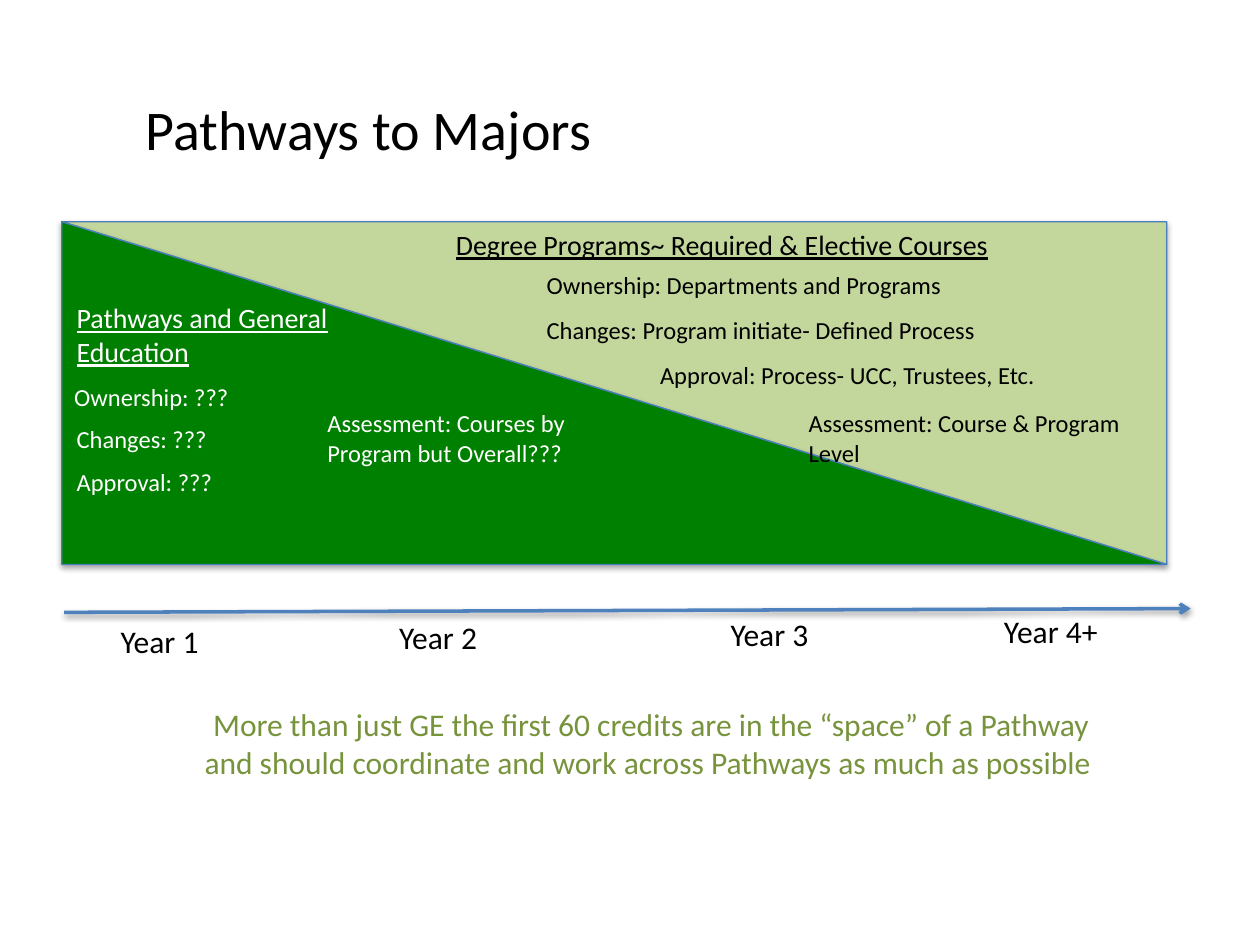
from dataclasses import dataclass

from lxml.etree import SubElement
from pptx import Presentation
from pptx.dml.color import RGBColor as Color
from pptx.enum.shapes import MSO_CONNECTOR as Connector, MSO_SHAPE as Shape
from pptx.enum.text import MSO_ANCHOR as Anchor, MSO_AUTO_SIZE as AutoSize, PP_ALIGN as Align
from pptx.oxml.ns import qn
from pptx.util import Inches, Pt


@dataclass(frozen=True)
class Theme:
    font: str = "Calibri"
    black: str = "000000"
    white: str = "FFFFFF"
    pale: str = "C3D69B"
    green: str = "008000"
    olive: str = "77933C"
    edge: str = "4B7EBC"
    arrow: str = "4F81BD"
    title: int = 32
    large: int = 18
    heading: int = 16
    body: int = 14


class PageBuilder:
    def __init__(self, page, theme):
        self.page = page
        self.theme = theme

    def shadow(self, element, opacity, distance):
        effects = SubElement(element.spPr, qn("a:effectLst"))
        values = {
            "blurRad": Pt(3.1),
            "dist": Pt(distance),
            "dir": 90 * 60000,
            "rotWithShape": 0,
        }
        outer = SubElement(effects, qn("a:outerShdw"))
        for name, value in values.items():
            outer.set(name, str(value))
        color = SubElement(outer, qn("a:srgbClr"), val=self.theme.black)
        SubElement(color, qn("a:alpha"), val=str(opacity * 1000))

    def stroke(self, line, color, width):
        line.color.rgb = Color.from_string(color)
        line.width = Pt(width)

    def triangle(self, left, top, width, height, fill, rotation=0):
        shape = self.page.shapes.add_shape(
            Shape.RIGHT_TRIANGLE, Inches(left), Inches(top), Inches(width), Inches(height)
        )
        shape.rotation = rotation
        shape.fill.solid()
        shape.fill.fore_color.rgb = Color.from_string(fill)
        self.stroke(shape.line, self.theme.edge, 0.75)
        self.shadow(shape._element, 35, 1.8)

    def arrow(self, start, end):
        line = self.page.shapes.add_connector(
            Connector.STRAIGHT, *(Inches(value) for value in (*start, *end))
        )
        self.stroke(line.line, self.theme.arrow, 2)
        SubElement(line.line._get_or_add_ln(), qn("a:tailEnd"), type="arrow")
        self.shadow(line._element, 38, 1.6)

    def text(self, words, left, top, width, height, size, color,
             underline=False, frame_format=None, align=Align.LEFT):
        box = self.page.shapes.add_textbox(
            Inches(left), Inches(top), Inches(width), Inches(height)
        )
        frame = box.text_frame
        settings = {"word_wrap": True, "auto_size": AutoSize.SHAPE_TO_FIT_TEXT}
        for name, value in (settings | (frame_format or {})).items():
            setattr(frame, name, value)
        para = frame.paragraphs[0]
        para.alignment = align
        span = para.add_run()
        span.text = words
        font_format = {"name": self.theme.font, "size": Pt(size), "underline": underline}
        for name, value in font_format.items():
            setattr(span.font, name, value)
        span.font.color.rgb = Color.from_string(color)


def main():
    deck = Presentation()
    deck.slide_width, deck.slide_height = Inches(10), Inches(7.5)
    theme = Theme()
    builder = PageBuilder(deck.slides.add_slide(deck.slide_layouts[6]), theme)

    for fill, rotation in ((theme.pale, 180), (theme.green, 0)):
        builder.triangle(0.49, 1.76, 8.77, 2.72, fill, rotation)

    builder.text(
        "More than just GE the first 60 credits are in the “space” of a Pathway "
        "and should coordinate and work across Pathways as much as possible ",
        1.43, 5.29, 7.48, 1.21, theme.large, theme.olive, align=Align.CENTER,
        frame_format={"auto_size": AutoSize.NONE, "vertical_anchor": Anchor.MIDDLE},
    )
    builder.text("Pathways to Majors", 1.06, 0.7, 7.6, 0.64, theme.title, theme.black)

    headings = (
        ("Pathways and General Education", 0.51, 2.34, 2.31, 0.64, theme.white),
        ("Degree Programs~ Required & Elective Courses", 3.52, 1.76, 5.46, 0.37, theme.black),
    )
    for words, left, top, width, height, color in headings:
        builder.text(words, left, top, width, height, theme.heading, color, underline=True)

    pathway_rows = (
        ("Ownership: ???", 0.49, 1.99),
        ("Changes: ???", 0.51, 1.79),
        ("Approval: ???", 0.51, 1.79),
    )
    degree_rows = (
        ("Ownership: Departments and Programs", 4.24, 4.15),
        ("Changes: Program initiate- Defined Process", 4.24, 5.02),
        ("Approval: Process- UCC, Trustees, Etc.", 5.14, 4.12),
    )
    columns = (
        (pathway_rows, 2.98, 0.34, theme.white),
        (degree_rows, 2.09, 0.36, theme.black),
    )
    for rows, first, step, color in columns:
        for index, (words, left, width) in enumerate(rows):
            builder.text(words, left, first + index * step, width, 0.34, theme.body, color)

    assessments = (
        ("Assessment: Course & Program Level", 6.32, 2.94, theme.black),
        ("Assessment: Courses by Program but Overall???", 2.5, 2.66, theme.white),
    )
    for words, left, width, color in assessments:
        builder.text(words, left, 3.19, width, 0.57, theme.body, color)

    builder.arrow((0.51, 4.86), (9.45, 4.83))
    years = (
        ("Year 1", 0.86, 4.89, 1.04),
        ("Year 2", 3.07, 4.86, 0.9),
        ("Year 3", 5.7, 4.83, 0.9),
        ("Year 4+", 7.87, 4.81, 1.03),
    )
    for words, left, top, width in years:
        builder.text(words, left, top, width, 0.4, theme.large, theme.black,
                     frame_format={"word_wrap": False})

    deck.save("out.pptx")


if __name__ == "__main__":
    main()
